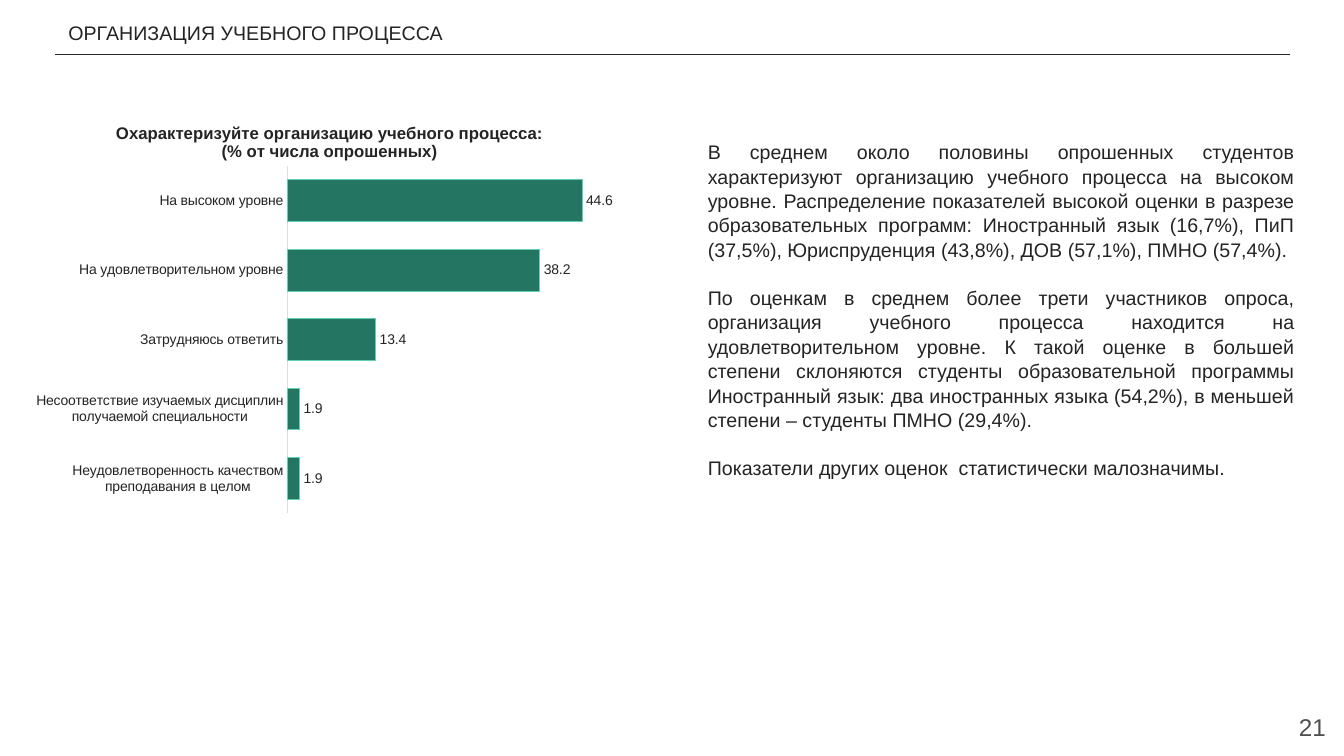
from lxml import etree
from pptx import Presentation
from pptx.chart.data import CategoryChartData
from pptx.dml.color import RGBColor
from pptx.enum.chart import XL_CHART_TYPE, XL_LABEL_POSITION, XL_TICK_MARK
from pptx.enum.shapes import MSO_CONNECTOR
from pptx.enum.text import MSO_ANCHOR, PP_ALIGN
from pptx.oxml import parse_xml
from pptx.oxml.ns import nsdecls, qn
from pptx.util import Inches, Pt

BAR = XL_CHART_TYPE.BAR_CLUSTERED
OUTSIDE = XL_LABEL_POSITION.OUTSIDE_END
NO_TICK = XL_TICK_MARK.NONE
STRAIGHT = MSO_CONNECTOR.STRAIGHT
TOP, MIDDLE = MSO_ANCHOR.TOP, MSO_ANCHOR.MIDDLE
LEFT, RIGHT, JUSTIFY = PP_ALIGN.LEFT, PP_ALIGN.RIGHT, PP_ALIGN.JUSTIFY

FONT = "Arial"
COLORS = {"text": "242424", "number": "505050", "bar": "247561",
          "bar_line": "62CFB5", "axis": "DEDEDE", "bg": "FFFFFF"}

CHART_TITLE = ["Охарактеризуйте организацию учебного процесса:",
               "(% от числа опрошенных)"]
ANSWERS = [
    ("Неудовлетворенность качеством преподавания в целом", 1.9),
    ("Несоответствие изучаемых дисциплин получаемой специальности", 1.9),
    ("Затрудняюсь ответить", 13.4),
    ("На удовлетворительном уровне", 38.2),
    ("На высоком уровне", 44.6),
]
COMMENTARY = [
    "В среднем около половины опрошенных студентов характеризуют организацию "
    "учебного процесса на высоком уровне. Распределение показателей высокой "
    "оценки в разрезе образовательных программ: Иностранный язык (16,7%), "
    "ПиП (37,5%), Юриспруденция (43,8%), ДОВ (57,1%), ПМНО (57,4%).",
    "По оценкам в среднем более трети участников опроса, организация учебного "
    "процесса находится на удовлетворительном уровне. К такой оценке в большей "
    "степени склоняются студенты образовательной программы Иностранный язык: "
    "два иностранных языка (54,2%), в меньшей степени – студенты ПМНО (29,4%).",
    "Показатели других оценок  статистически малозначимы.",
]


def rgb(name):
    """Return the named colour."""
    return RGBColor.from_string(COLORS[name])


def style_font(font, size, color="text", bold=False):
    """Set face, size, colour and weight of a font."""
    font.name, font.size, font.bold = FONT, Pt(size), bold
    font.color.rgb = rgb(color)


def add_text(s, box, paragraphs, size, color="text", align=LEFT,
             anchor=TOP, inset=0.13, gap=0, spacing=1.0):
    """Add a text box with equally styled paragraphs."""
    tf = s.shapes.add_textbox(*map(Inches, box)).text_frame
    tf.word_wrap = True
    tf.vertical_anchor = anchor
    tf.margin_left = tf.margin_right = Inches(inset)
    tf.margin_top = tf.margin_bottom = Inches(inset)
    for i, text in enumerate(paragraphs):
        p = tf.add_paragraph() if i else tf.paragraphs[0]
        p.alignment = align
        p.line_spacing = spacing
        p.space_before = Pt(gap if i else 0)
        r = p.add_run()
        r.text = text
        style_font(r.font, size, color)


def add_header(s, box):
    """Add the section heading and the rule under it."""
    x, y, w, h = box
    rule = s.shapes.add_connector(STRAIGHT, Inches(x), Inches(y + h),
                                  Inches(x + w), Inches(y + h))
    rule.line.color.rgb = rgb("text")
    rule.line.width = Pt(0.75)
    etree.SubElement(rule._element.spPr, qn("a:effectLst"))
    add_text(s, (x + 0.03, y, 5.9, 0.39), ["ОРГАНИЗАЦИЯ УЧЕБНОГО ПРОЦЕССА"],
             14, inset=0.1)


def set_layout(element, target, **fractions):
    """Place a chart part by fractions of the chart area."""
    for old in element.findall(qn("c:layout")):
        element.remove(old)
    modes = '<c:layoutTarget val="inner"/>' if target else ""
    modes += '<c:xMode val="edge"/><c:yMode val="edge"/>'
    places = "".join(f'<c:{k} val="{v}"/>' for k, v in fractions.items())
    layout = parse_xml(f'<c:layout {nsdecls("c")}><c:manualLayout>{modes}{places}'
                       '</c:manualLayout></c:layout>')
    tx = element.find(qn("c:tx"))
    element.insert(0 if tx is None else element.index(tx) + 1, layout)


def add_chart_title(chart):
    """Add the two-line bold chart title."""
    chart.has_title = True
    tf = chart.chart_title.text_frame
    for i, line in enumerate(CHART_TITLE):
        p = tf.add_paragraph() if i else tf.paragraphs[0]
        r = p.add_run()
        r.text = line
        style_font(r.font, 12, bold=True)
    chart.chart_title.include_in_layout = False
    set_layout(chart.chart_title._element, False, x=0.13, y=0.04)


def add_answers_chart(s, box):
    """Add the bar chart of survey answers."""
    data = CategoryChartData(number_format="0.0")
    data.categories = [name for name, _ in ANSWERS]
    data.add_series("Series 1", [value for _, value in ANSWERS])
    chart = s.shapes.add_chart(BAR, *map(Inches, box), data).chart
    style_font(chart.font, 10)
    chart.has_legend = False
    add_chart_title(chart)
    set_layout(chart._chartSpace.chart.plotArea, True,
               x=0.43, y=0.13, w=0.57, h=0.67)

    plot = chart.plots[0]
    plot.gap_width = 66
    plot.vary_by_categories = False
    bars = plot.series[0]
    bars.format.fill.solid()
    bars.format.fill.fore_color.rgb = rgb("bar")
    bars.format.line.color.rgb = rgb("bar_line")
    bars.format.line.width = Pt(0.75)
    labels = bars.data_labels
    labels.show_value = True
    labels.position = OUTSIDE
    style_font(labels.font, 10)

    names = chart.category_axis
    names.major_tick_mark = names.minor_tick_mark = NO_TICK
    names.format.line.color.rgb = rgb("axis")
    names.format.line.width = Pt(0.75)
    style_font(names.tick_labels.font, 10)
    values = chart.value_axis
    values.minimum_scale, values.maximum_scale = 0, 50
    values.has_major_gridlines = False
    values.visible = False


def add_commentary(s, box):
    """Add the justified commentary on the answers."""
    add_text(s, box, COMMENTARY, 14, align=JUSTIFY, gap=16.8, spacing=1.04)


def add_page_number(s, box):
    """Add the page number in the corner."""
    add_text(s, box, ["21"], 17.3, "number", RIGHT, MIDDLE)


def main():
    """Build and save the slide."""
    prs = Presentation()
    prs.slide_width, prs.slide_height = Inches(13.33), Inches(7.5)
    s = prs.slides.add_slide(prs.slide_layouts[6])
    s.background.fill.solid()
    s.background.fill.fore_color.rgb = rgb("bg")
    add_header(s, (0.55, 0.11, 12.24, 0.43))
    add_page_number(s, (12.48, 6.93, 0.8, 0.57))
    add_commentary(s, (6.89, 1.25, 6.08, 4.16))
    add_answers_chart(s, (0.36, 0.98, 5.77, 5.14))
    prs.save("out.pptx")


if __name__ == "__main__":
    main()
